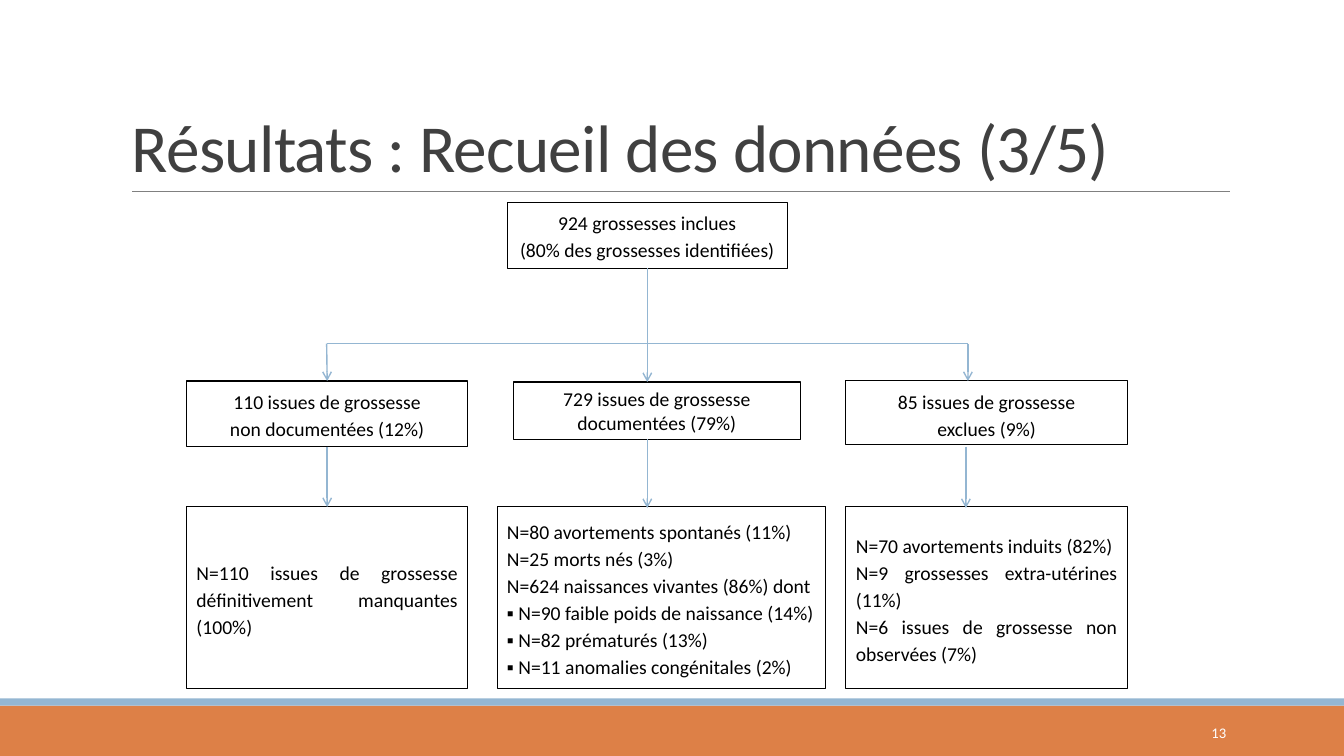
from pptx import Presentation
from pptx.dml.color import RGBColor
from pptx.enum.shapes import MSO_CONNECTOR, MSO_SHAPE
from pptx.enum.text import MSO_ANCHOR, PP_ALIGN
from pptx.oxml.ns import qn
from pptx.util import Pt
from lxml import etree

PX = 9144  # 100 px to the inch
RECTANGLE, STRAIGHT = MSO_SHAPE.RECTANGLE, MSO_CONNECTOR.STRAIGHT
TOP, MIDDLE, BOTTOM = MSO_ANCHOR.TOP, MSO_ANCHOR.MIDDLE, MSO_ANCHOR.BOTTOM
CENTER, JUSTIFY = PP_ALIGN.CENTER, PP_ALIGN.JUSTIFY
LEFT, RIGHT = PP_ALIGN.LEFT, PP_ALIGN.RIGHT
TOP_SIDE, BOTTOM_SIDE = 0, 2

ORANGE = RGBColor(0xDD, 0x80, 0x47)
BLUE = RGBColor(0x94, 0xB6, 0xD2)
GRAY = RGBColor(0x80, 0x80, 0x80)
DARK = RGBColor(0x40, 0x40, 0x40)
BLACK = RGBColor(0, 0, 0)
WHITE = RGBColor(0xFF, 0xFF, 0xFF)

presentation = Presentation()
presentation.slide_width = 1333 * PX
presentation.slide_height = 750 * PX
slide = presentation.slides.add_slide(presentation.slide_layouts[6])
shapes = slide.shapes


def write_text(shape, lines, anchor, alignment, spacing, size, color):
    frame = shape.text_frame
    frame.word_wrap = True
    frame.vertical_anchor = anchor
    for index, line in enumerate(lines):
        paragraph = frame.add_paragraph() if index else frame.paragraphs[0]
        paragraph.alignment = alignment
        paragraph.line_spacing = spacing
        run = paragraph.add_run()
        run.text = line
        font_format = {"name": "Calibri", "size": Pt(size)}
        for name, value in font_format.items():
            setattr(run.font, name, value)
        run.font.color.rgb = color


def add_line(start, end, color, width, arrow=False):
    points = [value * PX for value in (*start, *end)]
    connector = shapes.add_connector(STRAIGHT, *points)
    connector.line.color.rgb = color
    connector.line.width = Pt(width)
    if arrow:
        line = connector.line._get_or_add_ln()
        etree.SubElement(line, qn("a:tailEnd"), type="arrow")
    etree.SubElement(connector._element.spPr, qn("a:effectLst"))
    return connector


# Footer bands
for top, height, color in ((700, 50, ORANGE), (693, 7, BLUE)):
    band = shapes.add_shape(RECTANGLE, 0, top * PX, 1333 * PX, height * PX)
    band.shadow.inherit = False
    band.fill.solid()
    band.fill.fore_color.rgb = color
    band.line.fill.background()

# Title with its rule, and slide number
add_line((131, 190), (1220, 190), GRAY, 0.5)
title = shapes.add_textbox(121 * PX, 31 * PX, 1100 * PX, 159 * PX)
write_text(title, ["Résultats : Recueil des données (3/5)"],
           BOTTOM, LEFT, 0.85, 48, DARK)
title.text_frame.paragraphs[0].runs[0].font._element.set("spc", "-50")
slide_number = shapes.add_textbox(1083 * PX, 707 * PX, 143 * PX, 40 * PX)
write_text(slide_number, ["13"], MIDDLE, RIGHT, 1.0, 10.5, WHITE)

# Flowchart boxes: left, top, width, height, anchor, alignment, spacing, lines
box_rows = {
    "included": (503, 201, 278, 65, TOP, CENTER, 1.15, [
        "924 grossesses inclues", "(80% des grossesses identifiées)"]),
    "undocumented": (185, 378, 279, 65, TOP, CENTER, 1.15, [
        "110 issues de grossesse", "non documentées (12%)"]),
    "documented": (509, 379, 285, 57, TOP, CENTER, 1.0, [
        "729 issues de grossesse", "documentées (79%)"]),
    "excluded": (839, 378, 279, 63, TOP, CENTER, 1.15, [
        "85 issues de grossesse", "exclues (9%)"]),
    "missing detail": (185, 503, 279, 180, MIDDLE, JUSTIFY, 1.15, [
        "N=110 issues de grossesse définitivement manquantes (100%)"]),
    "documented detail": (493, 503, 326, 180, MIDDLE, JUSTIFY, 1.15, [
        "N=80 avortements spontanés (11%)",
        "N=25 morts nés (3%)",
        "N=624 naissances vivantes (86%) dont",
        "▪ N=90 faible poids de naissance (14%)",
        "▪ N=82 prématurés (13%)",
        "▪ N=11 anomalies congénitales (2%)"]),
    "excluded detail": (839, 503, 279, 180, MIDDLE, JUSTIFY, 1.15, [
        "N=70 avortements induits (82%)",
        "N=9 grossesses extra-utérines (11%)",
        "N=6 issues de grossesse non observées (7%)"]),
}
boxes = {}
for name, (left, top, width, height, anchor, alignment, spacing, lines) in box_rows.items():
    box = shapes.add_shape(RECTANGLE, left * PX, top * PX, width * PX, height * PX)
    box.shadow.inherit = False
    box.fill.solid()
    box.fill.fore_color.rgb = WHITE
    box.line.color.rgb = BLACK
    box.line.width = Pt(0.75)
    write_text(box, lines, anchor, alignment, spacing, 14, BLACK)
    boxes[name] = box

# Branches: start, end, arrow, box at the start, box at the end
branches = [
    ((642, 266), (642, 341), False, "included", None),
    ((324, 341), (960, 341), False, None, None),
    ((324, 341), (324, 378), True, None, "undocumented"),
    ((642, 341), (642, 379), True, None, None),
    ((960, 341), (960, 378), True, None, None),
    ((324, 443), (324, 503), True, "undocumented", "missing detail"),
    ((642, 436), (642, 504), True, None, None),
    ((958, 443), (958, 504), True, None, None),
]
for start, end, arrow, source, target in branches:
    branch = add_line(start, end, BLUE, 1, arrow)
    if source:
        branch.begin_connect(boxes[source], BOTTOM_SIDE)
    if target:
        branch.end_connect(boxes[target], TOP_SIDE)

presentation.save("out.pptx")
